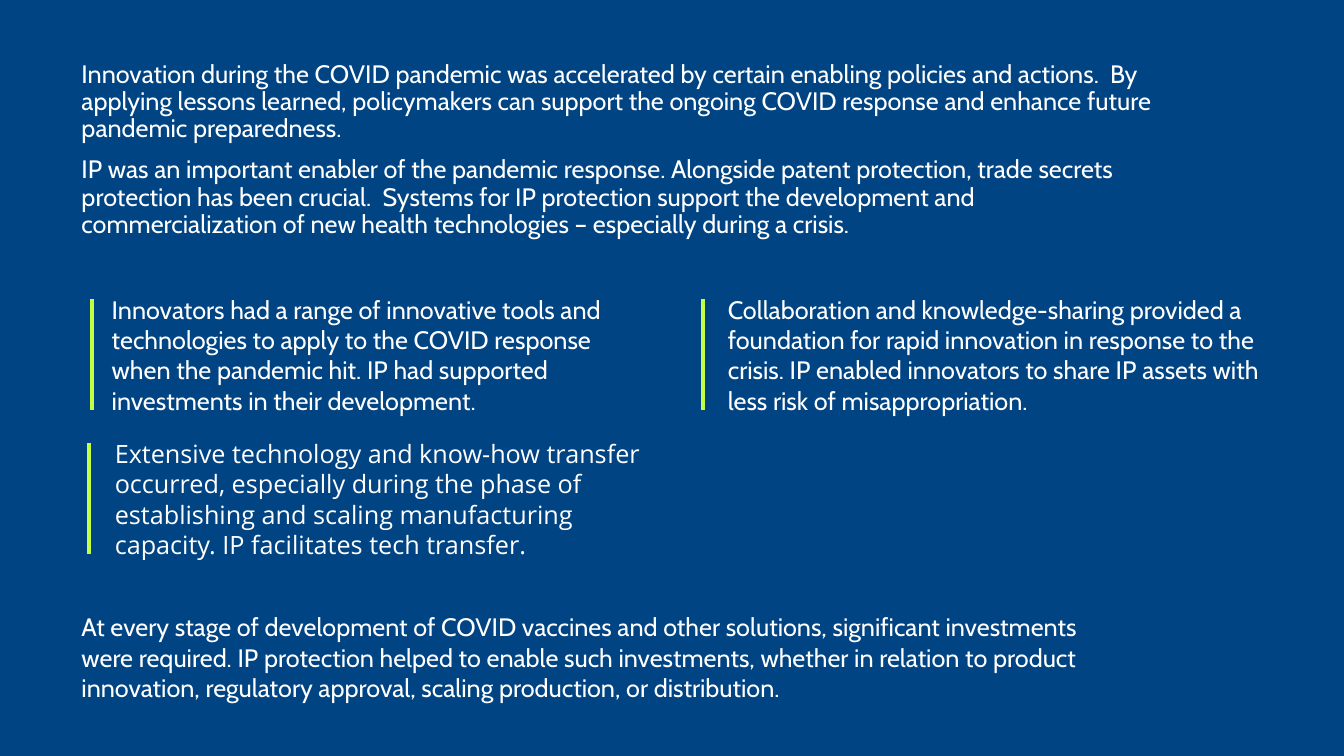
"""Build a slide on the role of IP in the COVID pandemic response."""
from dataclasses import dataclass

from lxml.etree import SubElement
from pptx import Presentation
from pptx.dml.color import RGBColor
from pptx.enum.shapes import MSO_CONNECTOR as Connector
from pptx.oxml.ns import qn
from pptx.slide import Slide
from pptx.util import Inches, Pt


@dataclass(frozen=True)
class Theme:
    background: RGBColor = RGBColor(0x00, 0x44, 0x83)
    text: RGBColor = RGBColor(0xFF, 0xFF, 0xFF)
    accent: RGBColor = RGBColor(0xC3, 0xFF, 0x43)
    font: str = "Cabin"
    alternate_font: str = "Open Sans"
    text_size: int = 18
    rule_width: int = 3


THEME = Theme()
RULE_HEIGHT = 1.1
RULE_OFFSET = 0.1


@dataclass(frozen=True)
class TextBlock:
    left: float
    top: float
    width: float
    height: float
    paragraphs: tuple[str, ...]
    font: str = THEME.font
    line_spacing: float = 1.0
    space_before: int = 0


@dataclass(frozen=True)
class Finding:
    rule_left: float
    block: TextBlock


INTRODUCTION = TextBlock(
    0.71, 0.56, 10.89, 2.31,
    (
        "Innovation during the COVID pandemic was accelerated by certain enabling policies "
        "and actions.  By applying lessons learned, policymakers can support the ongoing "
        "COVID response and enhance future pandemic preparedness.",
        "IP was an important enabler of the pandemic response. Alongside patent protection, "
        "trade secrets protection has been crucial.  Systems for IP protection support the "
        "development and commercialization of new health technologies – especially during "
        "a crisis.",
    ),
    line_spacing=0.9,
    space_before=10,
)

FINDINGS = (
    Finding(0.91, TextBlock(
        1.01, 2.87, 5.52, 1.31,
        ("Innovators had a range of innovative tools and technologies to apply to the COVID "
         "response when the pandemic hit. IP had supported investments in their "
         "development.",),
    )),
    Finding(6.97, TextBlock(
        7.12, 2.87, 5.68, 1.31,
        ("Collaboration and knowledge-sharing provided a foundation for rapid innovation in "
         "response to the crisis. IP enabled innovators to share IP assets with less risk of "
         "misappropriation.",),
    )),
    Finding(0.88, TextBlock(
        1.04, 4.3, 5.77, 1.31,
        ("Extensive technology and know-how transfer occurred, especially during the phase "
         "of establishing and scaling manufacturing capacity. IP facilitates tech "
         "transfer.",),
        font=THEME.alternate_font,
    )),
)

CONCLUSION = TextBlock(
    0.71, 6.02, 10.33, 1.01,
    ("At every stage of development of COVID vaccines and other solutions, significant "
     "investments were required. IP protection helped to enable such investments, whether "
     "in relation to product innovation, regulatory approval, scaling production, or "
     "distribution.",),
)


def add_text_block(slide: Slide, block: TextBlock) -> None:
    text_box = slide.shapes.add_textbox(
        Inches(block.left), Inches(block.top), Inches(block.width), Inches(block.height)
    )
    text_frame = text_box.text_frame
    text_frame.word_wrap = True
    text_frame.text = "\n".join(block.paragraphs)
    for paragraph in text_frame.paragraphs:
        paragraph.line_spacing = block.line_spacing
        paragraph.space_before = Pt(block.space_before)
        paragraph.font.name = block.font
        paragraph.font.size = Pt(THEME.text_size)
        paragraph.font.color.rgb = THEME.text


def add_finding(slide: Slide, finding: Finding) -> None:
    left = Inches(finding.rule_left)
    top = finding.block.top + RULE_OFFSET
    rule = slide.shapes.add_connector(
        Connector.STRAIGHT, left, Inches(top), left, Inches(top + RULE_HEIGHT)
    )
    rule.line.color.rgb = THEME.accent
    rule.line.width = Pt(THEME.rule_width)
    SubElement(rule.element.spPr, qn("a:effectLst"))
    add_text_block(slide, finding.block)


def main() -> None:
    presentation = Presentation()
    presentation.slide_width = Inches(13.33)
    presentation.slide_height = Inches(7.5)
    slide = presentation.slides.add_slide(presentation.slide_layouts.get_by_name("Blank"))
    background = slide.background.fill
    background.solid()
    background.fore_color.rgb = THEME.background
    add_text_block(slide, INTRODUCTION)
    for finding in FINDINGS:
        add_finding(slide, finding)
    add_text_block(slide, CONCLUSION)
    presentation.save("out.pptx")


if __name__ == "__main__":
    main()
